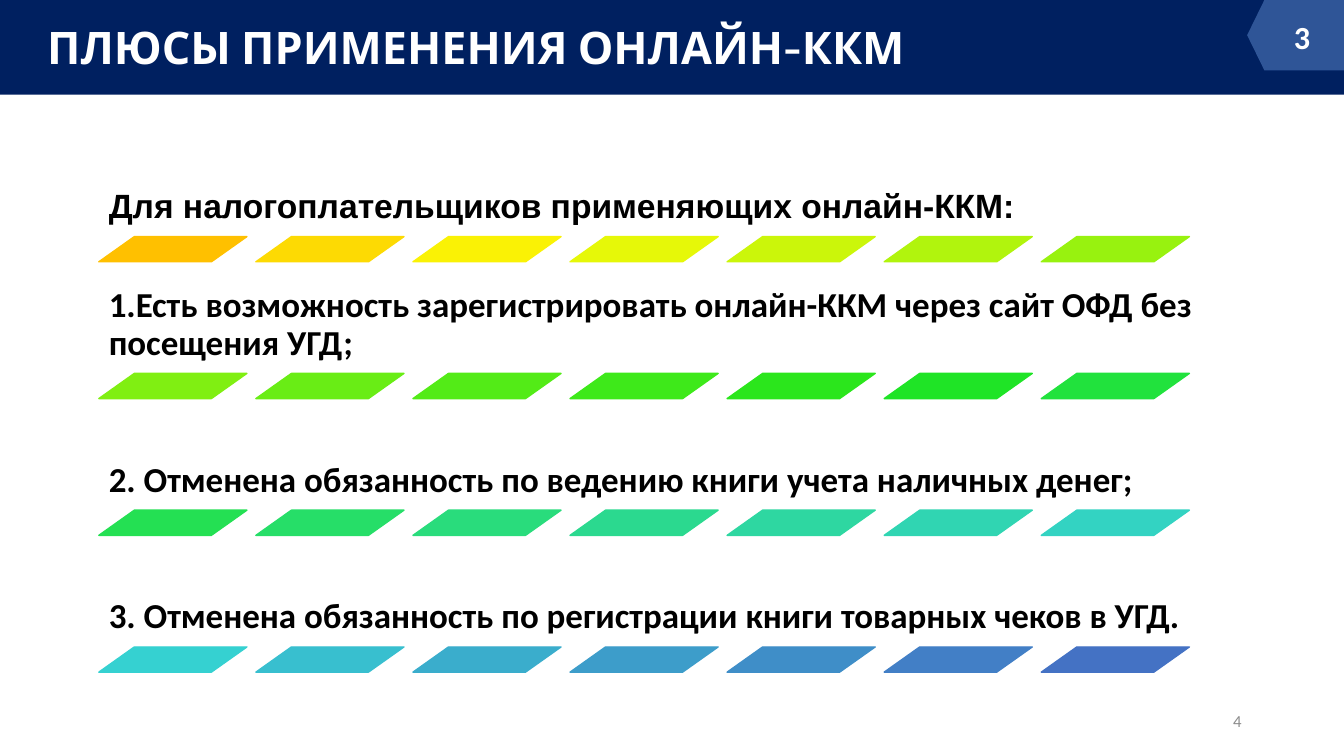
from colorsys import hls_to_rgb, rgb_to_hls

from pptx import Presentation
from pptx.dml.color import RGBColor
from pptx.enum.shapes import MSO_SHAPE
from pptx.enum.text import MSO_ANCHOR, PP_ALIGN
from pptx.util import Pt

COLORS = {
    "navy": "002060",
    "tab": "2F5597",
    "white": "FFFFFF",
    "black": "000000",
    "gray": "8C8C8C",
    "first_bar": "FFC000",
    "last_bar": "4472C4",
}
STATEMENTS = [
    ("Для налогоплательщиков применяющих онлайн-ККМ:", "Arial", 24),
    ("1.Есть возможность зарегистрировать онлайн-ККМ через сайт ОФД без посещения УГД;", "Calibri", 25),
    ("2. Отменена обязанность по ведению книги учета наличных денег;", "Calibri", 25),
    ("3. Отменена обязанность по регистрации книги товарных чеков в УГД.", "Calibri", 25),
]
BARS_PER_ROW = 7
LEFT = 70.6
BAR_PITCH = 112.2
ROW_PITCH = 97.7


def blend(start, end, share):
    first, last = (
        rgb_to_hls(*(channel / 255 for channel in RGBColor.from_string(color)))
        for color in (start, end)
    )
    mixed = (a + (b - a) * share for a, b in zip(first, last))
    return str(RGBColor(*(round(channel * 255) for channel in hls_to_rgb(*mixed))))


class SlideBuilder:
    """Draws styled elements on the current slide, with lengths in points."""

    def __init__(self, slide):
        self.slide = slide

    def shape(self, kind, box, color, line_width=0, adjustment=None, rotation=0):
        shape = self.slide.shapes.add_shape(kind, *map(Pt, box))
        shape.shadow.inherit = False
        shape.rotation = rotation
        if adjustment is not None:
            shape.adjustments[0] = adjustment
        shape.fill.solid()
        shape.fill.fore_color.rgb = RGBColor.from_string(color)
        if line_width:
            shape.line.color.rgb = RGBColor.from_string(color)
            shape.line.width = Pt(line_width)
        else:
            shape.line.fill.background()

    def text(self, box, words, font, size, color, bold=True, anchor=MSO_ANCHOR.TOP,
             align=PP_ALIGN.LEFT, insets=(7.2, 3.6), spacing=1.0, wrap=True):
        frame = self.slide.shapes.add_textbox(*map(Pt, box)).text_frame
        frame.word_wrap = wrap
        frame.vertical_anchor = anchor
        frame.margin_left = frame.margin_right = Pt(insets[0])
        frame.margin_top = frame.margin_bottom = Pt(insets[1])
        paragraph = frame.paragraphs[0]
        paragraph.alignment = align
        paragraph.line_spacing = spacing
        run = paragraph.add_run()
        run.text = words
        run.font.name = font
        run.font.size = Pt(size)
        run.font.bold = bold
        run.font.color.rgb = RGBColor.from_string(COLORS[color])

    def bar_row(self, row):
        last_index = len(STATEMENTS) * BARS_PER_ROW - 1
        for column in range(BARS_PER_ROW):
            share = (row * BARS_PER_ROW + column) / last_index
            color = blend(COLORS["first_bar"], COLORS["last_bar"], share)
            box = (LEFT + column * BAR_PITCH, 169 + row * ROW_PITCH, 108 - 2.2, 18)
            self.shape(MSO_SHAPE.PARALLELOGRAM, box, color, 1, 1.41)


def main():
    presentation = Presentation()
    presentation.slide_width = Pt(960)
    presentation.slide_height = Pt(540)
    builder = SlideBuilder(presentation.slides.add_slide(presentation.slide_layouts[6]))

    builder.shape(MSO_SHAPE.RECTANGLE, (0, 0, 960, 67.7), COLORS["navy"])
    builder.text((26.6, 10.8, 644.4, 46), "ПЛЮСЫ ПРИМЕНЕНИЯ ОНЛАЙН-ККМ", "Cabin", 32, "white", wrap=False)
    builder.text((678, 500.5, 216, 28.8), "4", "Calibri", 12, "gray", bold=False,
                 anchor=MSO_ANCHOR.MIDDLE, align=PP_ALIGN.RIGHT)

    for row, (words, font, size) in enumerate(STATEMENTS):
        builder.text((LEFT, 96.7 + row * ROW_PITCH, 795.6, 72), words, font, size, "black",
                     anchor=MSO_ANCHOR.BOTTOM, insets=(7.2, 7.2), spacing=0.9)
        builder.bar_row(row)

    builder.shape(MSO_SHAPE.PENTAGON, (890.8, 0, 69.2, 50.2), COLORS["tab"],
                  adjustment=0.245, rotation=180)
    builder.text((893.5, 11.5, 51.8, 28.8), "3", "Calibri", 23, "white",
                 anchor=MSO_ANCHOR.MIDDLE, align=PP_ALIGN.RIGHT, insets=(9.4, 5))
    presentation.save("out.pptx")


if __name__ == "__main__":
    main()
